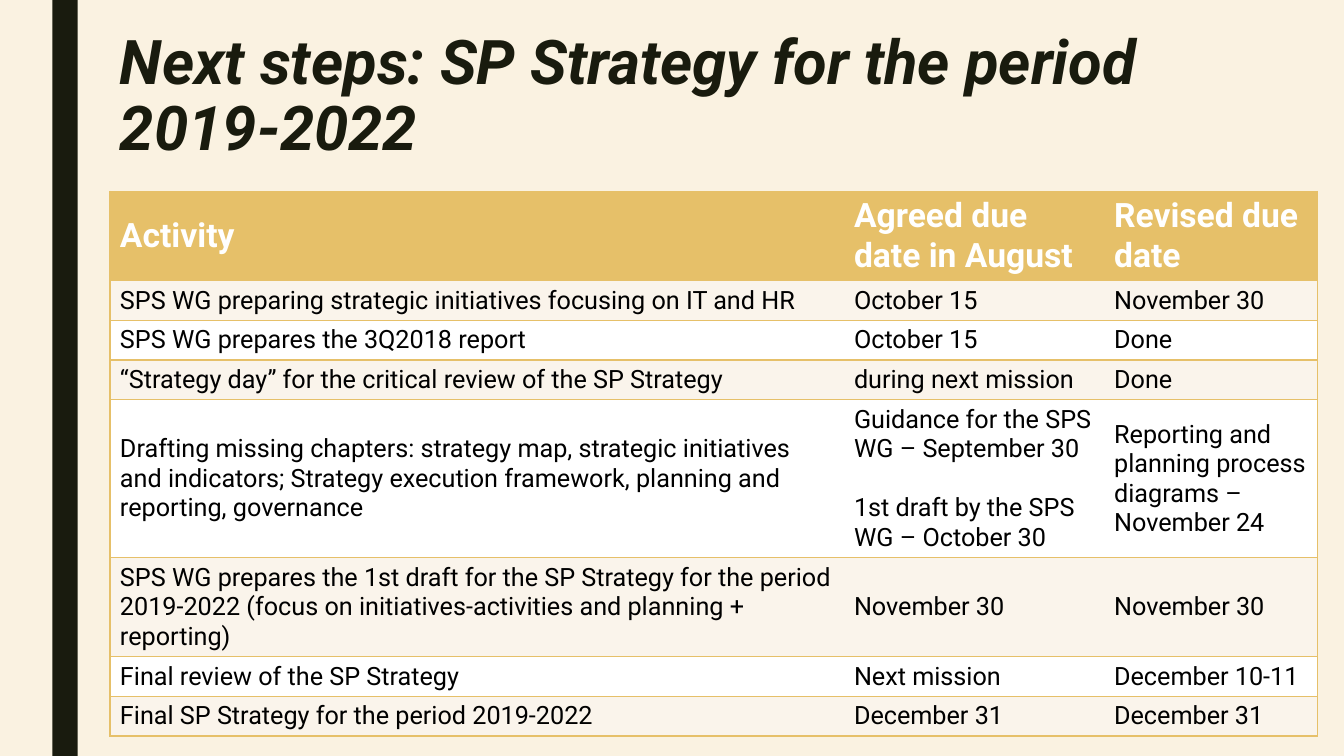
from lxml.etree import SubElement
from pptx import Presentation
from pptx.dml.color import RGBColor
from pptx.enum.shapes import MSO_SHAPE as Shape
from pptx.enum.text import MSO_ANCHOR as Anchor, PP_ALIGN as Align
from pptx.oxml.ns import qn
from pptx.util import Inches, Pt

FONT = "Roboto"
CREAM, DARK, GOLD = "FAF2E1", "191B0E", "E6C069"
BLACK, WHITE, TINT = "000000", "FFFFFF", "FAF4EB"

TITLE = "Next steps: SP Strategy for the period 2019-2022"
ROWS = [
    ("Activity", "Agreed due date in August", "Revised due date"),
    ("SPS WG preparing strategic initiatives focusing on IT and HR",
     "October 15", "November 30"),
    ("SPS WG prepares the 3Q2018 report", "October 15", "Done"),
    ("“Strategy day” for the critical review of the SP Strategy",
     "during next mission", "Done"),
    ("Drafting missing chapters: strategy map, strategic initiatives and "
     "indicators; Strategy execution framework, planning and reporting, "
     "governance",
     "Guidance for the SPS WG – September 30\n"
     "1st draft by the SPS WG – October 30",
     "Reporting and planning process diagrams – November 24"),
    ("SPS WG prepares the 1st draft for the SP Strategy for the period "
     "2019-2022 (focus on initiatives-activities and planning + reporting)",
     "November 30", "November 30"),
    ("Final review of the SP Strategy", "Next mission", "December 10-11"),
    ("Final SP Strategy for the period 2019-2022",
     "December 31", "December 31"),
]
WIDTHS = (7.28, 2.58, 2.12)
HEIGHTS = (0.88, 0.39, 0.39, 0.39, 1.57, 0.98, 0.39, 0.39)
LEFT, TOP = 1.09, 1.9


def color(code):
    return RGBColor.from_string(code)


def paint(fill, code):
    fill.solid()
    fill.fore_color.rgb = color(code)


def style(para, size, code, bold, italic=False):
    font = para.font
    font.name, font.size = FONT, Pt(size)
    font.bold, font.italic = bold, italic
    font.color.rgb = color(code)
    para.alignment = Align.LEFT


def border(cell, sides):
    """Draw thin gold lines on the given sides; the others get none."""
    props = cell._tc.get_or_add_tcPr()
    for spot, side in enumerate("LRTB"):
        line = props.makeelement(qn(f"a:ln{side}"), {"w": str(Pt(1))})
        if side in sides:
            fill = SubElement(line, qn("a:solidFill"))
            SubElement(fill, qn("a:srgbClr"), val=GOLD)
        else:
            SubElement(line, qn("a:noFill"))
        props.insert(spot, line)


def add_title(slide):
    title = slide.shapes.title
    title.left, title.top = Inches(LEFT), Inches(0.27)
    title.width, title.height = Inches(10.5), Inches(1.62)
    frame = title.text_frame
    frame.text = TITLE
    frame.word_wrap = True
    frame.vertical_anchor = Anchor.TOP
    para = frame.paragraphs[0]
    para.line_spacing = 0.89
    style(para, 44, DARK, True, True)


def add_plan(slide):
    frame = slide.shapes.add_table(
        len(ROWS), len(WIDTHS), Inches(LEFT), Inches(TOP),
        Inches(sum(WIDTHS)), Inches(sum(HEIGHTS)))
    table = frame.table
    for col, width in zip(table.columns, WIDTHS):
        col.width = Inches(width)
    for row, height in zip(table.rows, HEIGHTS):
        row.height = Inches(height)
    for r, texts in enumerate(ROWS):
        head = r == 0
        back = GOLD if head else (WHITE, TINT)[r % 2]
        for c, text in enumerate(texts):
            cell = table.cell(r, c)
            cell.text = text
            cell.vertical_anchor = Anchor.MIDDLE
            paint(cell.fill, back)
            border(cell, ("LTB", "TB", "RTB")[c])
            for n, para in enumerate(cell.text_frame.paragraphs):
                style(para, 24 if head else 18,
                      WHITE if head else BLACK, head)
                if n:
                    para.space_before = Pt(21)


def main():
    deck = Presentation()
    deck.slide_width, deck.slide_height = Inches(13.33), Inches(7.5)
    slide = deck.slides.add_slide(deck.slide_layouts[5])
    paint(slide.background.fill, CREAM)
    bar = slide.shapes.add_shape(
        Shape.RECTANGLE, Inches(0.52), 0, Inches(0.25), Inches(7.5))
    bar.shadow.inherit = False
    paint(bar.fill, DARK)
    bar.line.fill.background()
    add_title(slide)
    add_plan(slide)
    deck.save("out.pptx")


if __name__ == "__main__":
    main()
